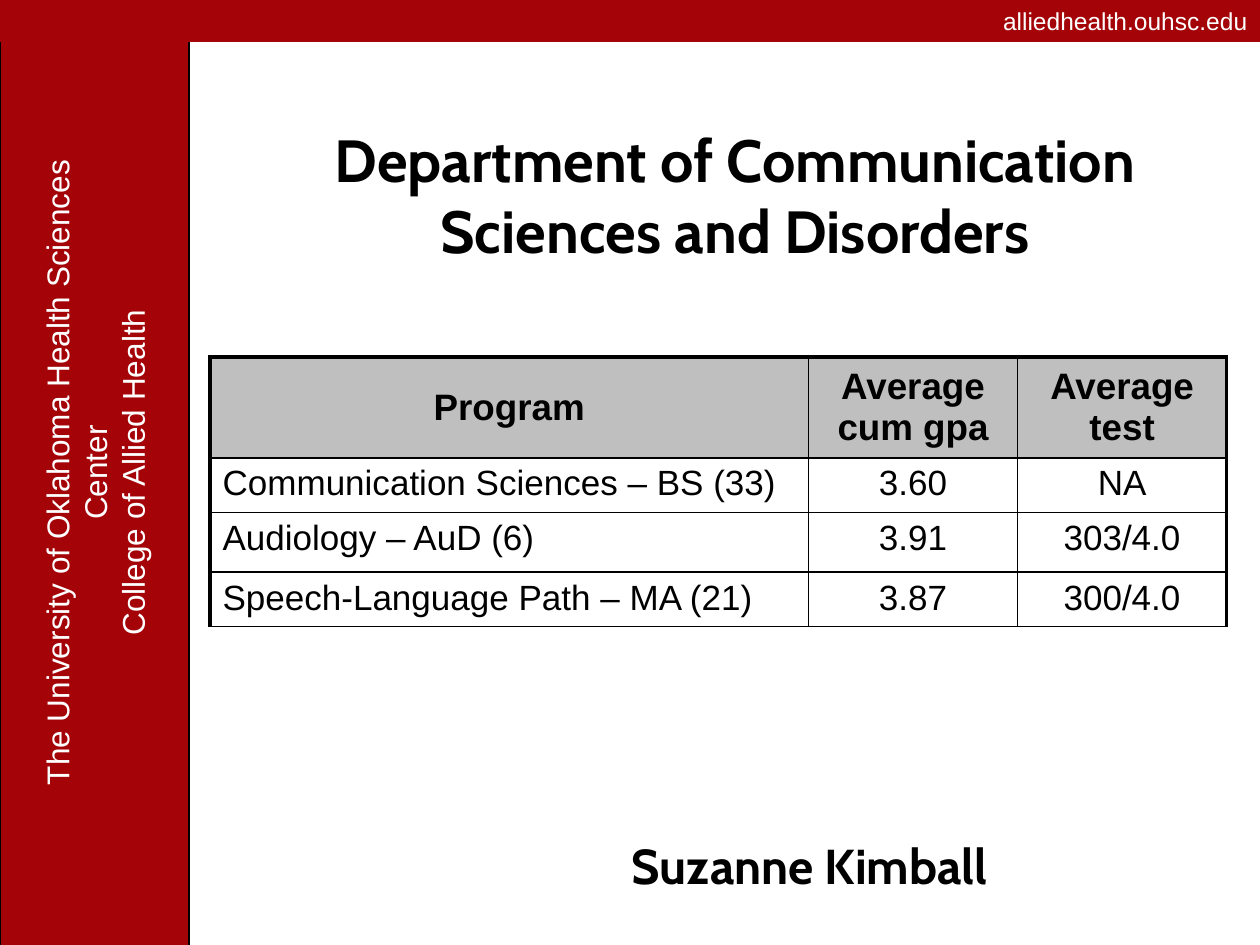
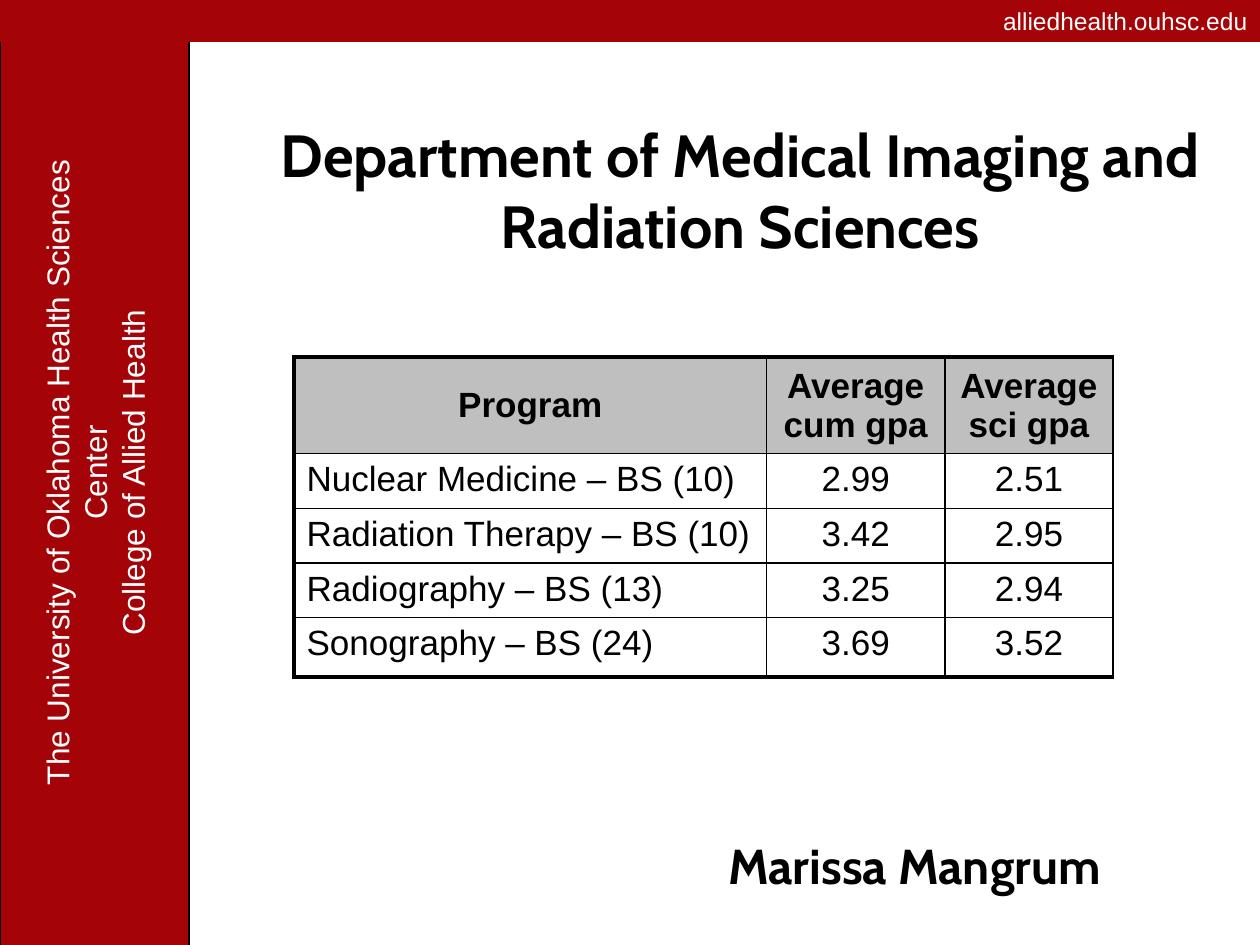
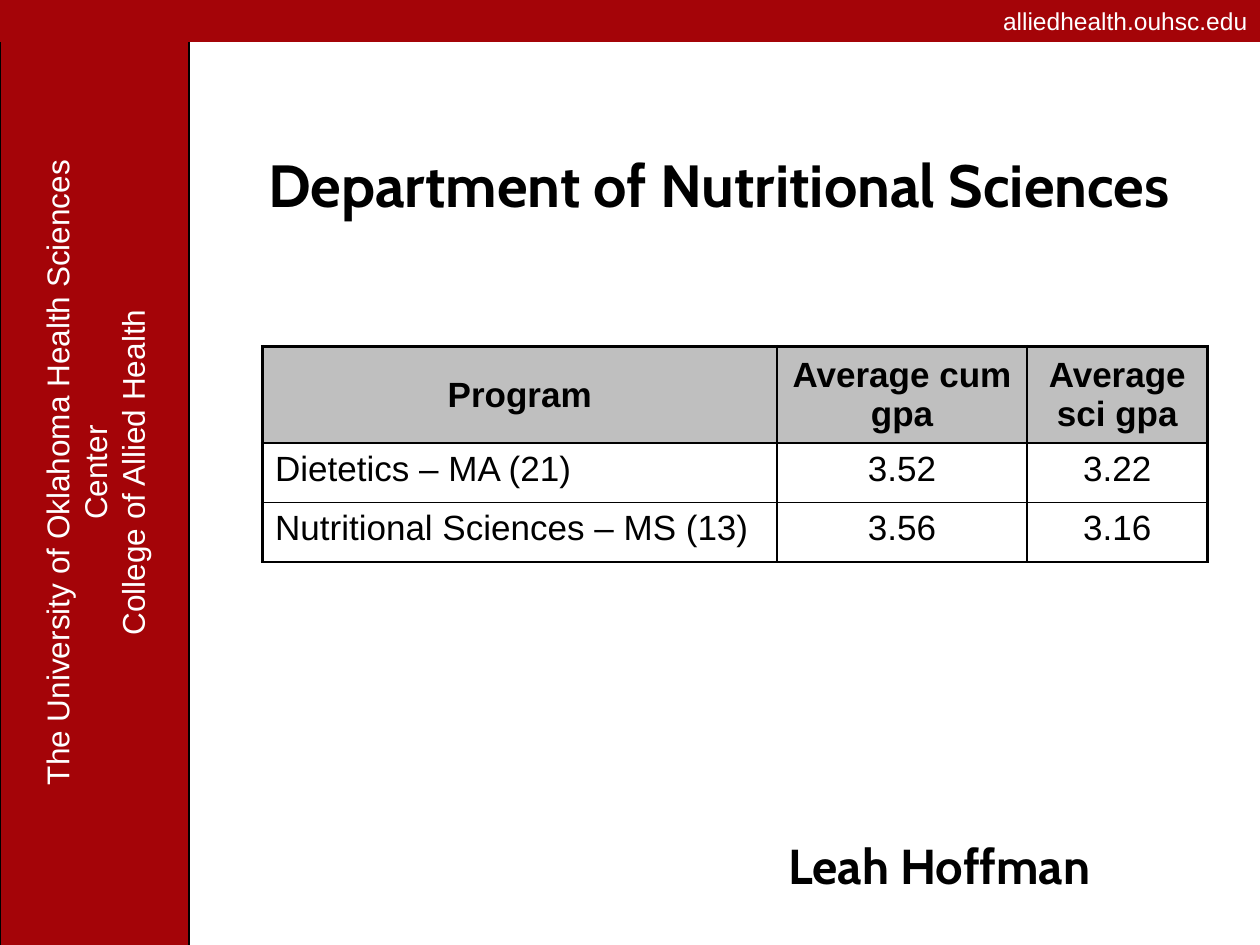
import pptx
import pptx.dml.color
import pptx.enum.shapes
import pptx.enum.text
import pptx.oxml.ns
import pptx.util
from lxml import etree

Pt = pptx.util.Pt
ALIGN = pptx.enum.text.PP_ALIGN
ANCHOR = pptx.enum.text.MSO_ANCHOR

# Shared style, all lengths in points
COLORS = {"crimson": "A40408", "black": "000000", "white": "FFFFFF", "header": "BFBFBF"}
BODY_FONT, TITLE_FONT = "Arial", "Cabin"
TITLE_SIZE, NAME_SIZE, CELL_SIZE = 34, 28, 20
THIN, THICK = 1, 2.25
SLIDE_WIDTH, SLIDE_HEIGHT = 720, 540
SIDEBAR_BOX = (0, 6, 108, 540)
SIDEBAR_TEXT_BOX = (-150, 240, 408, 60)
BAND_BOX = (0, 0, SLIDE_WIDTH, 24)
NAME_TOP, NAME_HEIGHT = 474, 41

# Content
SIDEBAR_TEXT = "The University of Oklahoma Health Sciences Center\vCollege of Allied Health"
WEB_ADDRESS = "alliedhealth.ouhsc.edu"
DEPARTMENTS = [
    {
        "title": "Department of Communication Sciences and Disorders",
        "title_box": (120, 72, 600, 78),
        "table_at": (120, 204),
        "columns": (342, 119.5, 119.5),
        "rows": (54, 29.5, 34, 29.5),
        "header_size": 21,
        "thick_sides": "LTR",
        "cells": [
            ("Program", "Average cum gpa", "Average test"),
            ("Communication Sciences – BS (33)", "3.60", "NA"),
            ("Audiology – AuD (6)", "3.91", "303/4.0"),
            ("Speech-Language Path – MA (21)", "3.87", "300/4.0"),
        ],
        "name": "Suzanne Kimball",
        "name_span": (354, 251),
        "name_align": ALIGN.LEFT,
    },
    {
        "title": "Department of Medical Imaging and Radiation Sciences",
        "title_box": (126, 66, 594, 84),
        "table_at": (168, 204),
        "columns": (270, 102, 96),
        "rows": (52, 29.5, 29.5, 29.5, 34),
        "header_size": 20,
        "thick_sides": "LTB",
        "cells": [
            ("Program", "Average cum gpa", "Average sci gpa"),
            ("Nuclear Medicine – BS (10)", "2.99", "2.51"),
            ("Radiation Therapy – BS (10)", "3.42", "2.95"),
            ("Radiography – BS (13)", "3.25", "2.94"),
            ("Sonography – BS (24)", "3.69", "3.52"),
        ],
        "name": "Marissa Mangrum",
        "name_span": (306, 330),
        "name_align": ALIGN.RIGHT,
    },
    {
        "title": "Department of Nutritional Sciences",
        "title_box": (132, 66, 558, 78),
        "table_at": (150, 198),
        "columns": (294, 143, 103),
        "rows": (52, 34, 34),
        "header_size": 20,
        "thick_sides": "LTR",
        "cells": [
            ("Program", "Average cum gpa", "Average sci gpa"),
            ("Dietetics – MA (21)", "3.52", "3.22"),
            ("Nutritional Sciences – MS (13)", "3.56", "3.16"),
        ],
        "name": "Leah Hoffman",
        "name_span": (336, 294),
        "name_align": ALIGN.RIGHT,
    },
]


def rgb(name):
    return pptx.dml.color.RGBColor.from_string(COLORS[name])


def write_text(text_frame, text, size, font, color, align, bold=False):
    text_frame.text = text
    paragraph = text_frame.paragraphs[0]
    paragraph.alignment = align
    for run in paragraph.runs:
        run.font.size = Pt(size)
        run.font.name = font
        run.font.bold = bold
        run.font.color.rgb = rgb(color)


def add_text(slide, box, text, size, font, color, align, bold=False, anchor=ANCHOR.MIDDLE):
    shape = slide.shapes.add_textbox(*map(Pt, box))
    shape.text_frame.word_wrap = True
    shape.text_frame.vertical_anchor = anchor
    write_text(shape.text_frame, text, size, font, color, align, bold)
    return shape


def add_panel(slide, box):
    shape = slide.shapes.add_shape(pptx.enum.shapes.MSO_SHAPE.RECTANGLE, *map(Pt, box))
    shape.shadow.inherit = False
    shape.fill.solid()
    shape.fill.fore_color.rgb = rgb("crimson")
    return shape


def add_frame(slide):
    """Red sidebar and top band shared by every slide."""
    sidebar = add_panel(slide, SIDEBAR_BOX)
    sidebar.line.color.rgb = rgb("black")
    sidebar.line.width = Pt(0.75)
    label = add_text(slide, SIDEBAR_TEXT_BOX, SIDEBAR_TEXT, 18, BODY_FONT, "white", ALIGN.CENTER)
    label.text_frame.word_wrap = False
    label.rotation = 270
    band = add_panel(slide, BAND_BOX)
    band.line.fill.background()
    band.text_frame.vertical_anchor = ANCHOR.MIDDLE
    write_text(band.text_frame, WEB_ADDRESS, 14, BODY_FONT, "white", ALIGN.RIGHT)


def set_borders(cell, thick_sides):
    properties = cell._tc.get_or_add_tcPr()
    for side in "LRTB":
        width = THICK if side in thick_sides else THIN
        line = etree.SubElement(properties, pptx.oxml.ns.qn("a:ln" + side), w=str(int(Pt(width))))
        fill = etree.SubElement(line, pptx.oxml.ns.qn("a:solidFill"))
        etree.SubElement(fill, pptx.oxml.ns.qn("a:srgbClr"), val=COLORS["black"])


def add_program_table(slide, department):
    columns, rows = department["columns"], department["rows"]
    box = (*department["table_at"], sum(columns), sum(rows))
    table = slide.shapes.add_table(len(rows), len(columns), *map(Pt, box)).table
    table.first_row = table.horz_banding = False
    for column, width in zip(table.columns, columns):
        column.width = Pt(width)
    for row, height in zip(table.rows, rows):
        row.height = Pt(height)

    for r, texts in enumerate(department["cells"]):
        for c, text in enumerate(texts):
            cell = table.cell(r, c)
            is_header = r == 0
            outer = {"L": c == 0, "R": c == len(columns) - 1, "T": is_header, "B": r == len(rows) - 1}
            set_borders(cell, [side for side in department["thick_sides"] if outer[side]])
            if is_header:
                cell.fill.solid()
                cell.fill.fore_color.rgb = rgb("header")
            else:
                cell.fill.background()
            cell.vertical_anchor = ANCHOR.MIDDLE if is_header else ANCHOR.TOP
            size = department["header_size"] if is_header else CELL_SIZE
            align = ALIGN.CENTER if is_header or c else ALIGN.LEFT
            write_text(cell.text_frame, text, size, BODY_FONT, "black", align, is_header)


def main():
    presentation = pptx.Presentation()
    presentation.slide_width = Pt(SLIDE_WIDTH)
    presentation.slide_height = Pt(SLIDE_HEIGHT)
    for department in DEPARTMENTS:
        slide = presentation.slides.add_slide(presentation.slide_layouts[6])
        add_frame(slide)
        add_text(slide, department["title_box"], department["title"],
                 TITLE_SIZE, TITLE_FONT, "black", ALIGN.CENTER, bold=True)
        add_program_table(slide, department)
        left, width = department["name_span"]
        add_text(slide, (left, NAME_TOP, width, NAME_HEIGHT), department["name"], NAME_SIZE,
                 TITLE_FONT, "black", department["name_align"], bold=True, anchor=ANCHOR.TOP)
    presentation.save("out.pptx")


if __name__ == "__main__":
    main()
